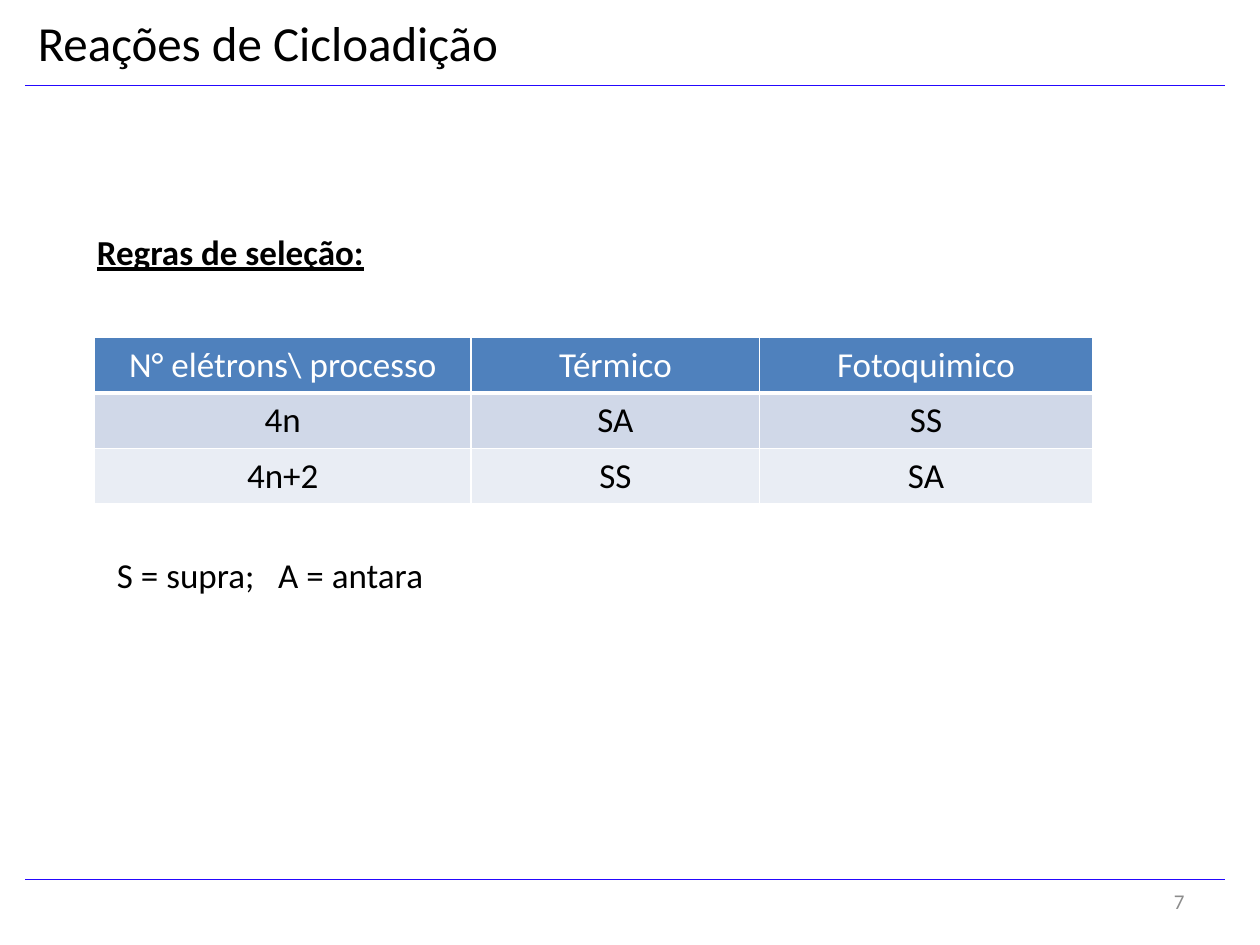
import pptx
import pptx.dml.color
import pptx.enum.shapes
import pptx.enum.text
import pptx.oxml
import pptx.oxml.ns
import pptx.util
from lxml import etree

# Content
TITLE = "Reações de Cicloadição"
HEADING = "Regras de seleção:"
LEGEND = "S = supra;   A = antara"
PAGE_NUMBER = "7"
RULES = [
    ("N° elétrons\\ processo", "Térmico", "Fotoquimico"),
    ("4n", "SA", "SS"),
    ("4n+2", "SS", "SA"),
]

# Layout in inches
WIDTH, HEIGHT = 10, 7.5
RULE_LEFT, RULE_RIGHT = 0.2, 9.72
RULE_HEIGHTS = (0.68, 6.98)
TABLE_LEFT, TABLE_TOP, ROW_HEIGHT = 0.75, 2.68, 0.43
COLUMN_WIDTHS = (2.99, 2.29, 2.64)

# Style
FONT = "Calibri"
BLACK, WHITE, GREY, RULE_COLOR = "000000", "FFFFFF", "8C8C8C", "2508FE"
ROW_FILLS = ("4F81BD", "D0D8E8", "E9EDF4")
ALIGN = pptx.enum.text.PP_ALIGN
ANCHOR = pptx.enum.text.MSO_ANCHOR
inches = pptx.util.Inches


def color(value):
    return pptx.dml.color.RGBColor.from_string(value)


def write(frame, text, size=20, fill=BLACK, bold=False, underline=False, align=ALIGN.LEFT):
    paragraph = frame.paragraphs[0]
    paragraph.alignment = align
    run = paragraph.add_run()
    run.text = text
    run.font.name = FONT
    run.font.size = pptx.util.Pt(size)
    run.font.bold = bold
    run.font.underline = underline
    run.font.color.rgb = color(fill)


def place(shape, box, text, anchor=ANCHOR.TOP, wrap=True, **style):
    shape.left, shape.top, shape.width, shape.height = map(inches, box)
    frame = shape.text_frame
    frame.word_wrap = wrap
    frame.vertical_anchor = anchor
    frame.auto_size = pptx.enum.text.MSO_AUTO_SIZE.NONE
    write(frame, text, **style)


def add_text(slide, box, text, **style):
    place(slide.shapes.add_textbox(*map(inches, box)), box, text, **style)


def add_rule(slide, top):
    line = slide.shapes.add_connector(
        pptx.enum.shapes.MSO_CONNECTOR.STRAIGHT,
        *map(inches, (RULE_LEFT, top, RULE_RIGHT, top)))
    line.line.color.rgb = color(RULE_COLOR)
    line.line.width = pptx.util.Pt(0.75)
    etree.SubElement(line._element.spPr, pptx.oxml.ns.qn("a:effectLst"))


def set_borders(cell, bottom):
    properties = cell._tc.get_or_add_tcPr()
    widths = {"lnL": 1, "lnR": 1, "lnT": 1, "lnB": bottom}
    for position, (side, width) in enumerate(widths.items()):
        border = pptx.oxml.parse_xml(
            f'<a:{side} {pptx.oxml.ns.nsdecls("a")} w="{pptx.util.Pt(width)}">'
            f'<a:solidFill><a:srgbClr val="{WHITE}"/></a:solidFill></a:{side}>')
        properties.insert(position, border)


def add_rules_table(slide):
    frame = slide.shapes.add_table(
        len(RULES), len(COLUMN_WIDTHS), inches(TABLE_LEFT), inches(TABLE_TOP),
        inches(sum(COLUMN_WIDTHS)), inches(ROW_HEIGHT * len(RULES)))
    table = frame.table
    for column, width in zip(table.columns, COLUMN_WIDTHS):
        column.width = inches(width)
    for row_index, (texts, fill) in enumerate(zip(RULES, ROW_FILLS)):
        header = row_index == 0
        table.rows[row_index].height = inches(ROW_HEIGHT)
        for column_index, text in enumerate(texts):
            cell = table.cell(row_index, column_index)
            cell.fill.solid()
            cell.fill.fore_color.rgb = color(fill)
            write(cell.text_frame, text, fill=WHITE if header else BLACK, align=ALIGN.CENTER)
            set_borders(cell, bottom=3 if header else 1)


def main():
    presentation = pptx.Presentation()
    presentation.slide_width, presentation.slide_height = inches(WIDTH), inches(HEIGHT)
    slide = presentation.slides.add_slide(presentation.slide_layouts[5])

    # Frame of the slide: page number, rules and title
    add_text(slide, (7.17, 6.95, 2.33, 0.4), PAGE_NUMBER, size=12, fill=GREY,
             align=ALIGN.RIGHT, anchor=ANCHOR.MIDDLE)
    for top in RULE_HEIGHTS:
        add_rule(slide, top)
    place(slide.shapes.title, (0.2, 0.05, 4.01, 0.57), TITLE, size=28, wrap=False)

    # Selection rules
    add_rules_table(slide)
    add_text(slide, (0.67, 1.78, 2.34, 0.44), HEADING, bold=True, underline=True, wrap=False)
    add_text(slide, (0.83, 4.34, 4.02, 0.44), LEGEND)

    presentation.save("out.pptx")


if __name__ == "__main__":
    main()
